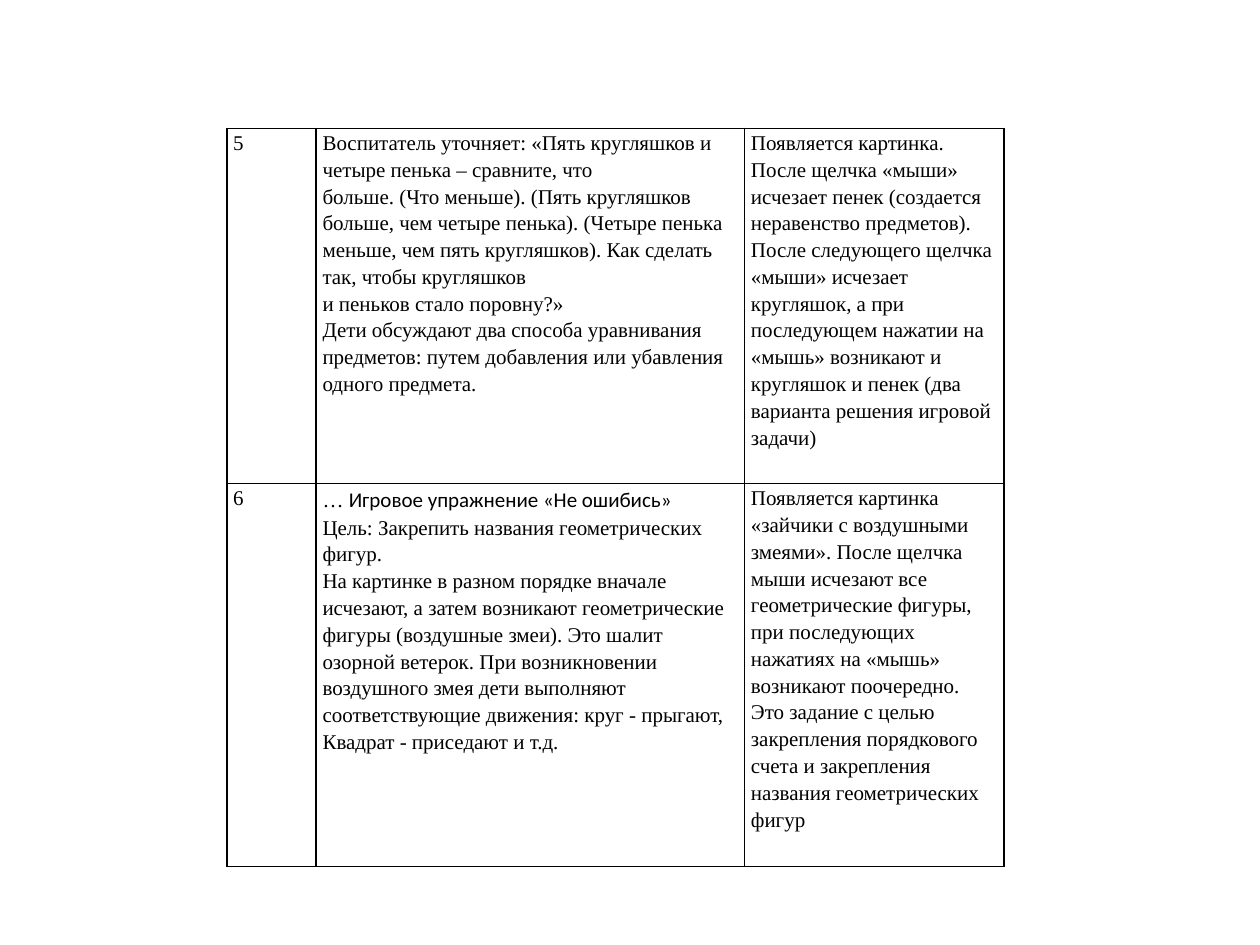
from lxml.etree import SubElement
from pptx import Presentation
from pptx.dml.color import RGBColor
from pptx.oxml.ns import qn
from pptx.util import Pt

BODY_FONT = "Times New Roman"
HEADING_FONT = "Calibri"
BLACK = "000000"
COLUMN_WIDTHS = [51.12, 244.8, 148.32]
ROW_HEIGHTS = [203, 218.9]

# A paragraph is a list of (text, font) spans; a plain string is one body span.
LESSON_ROWS = [
    [
        ["5"],
        [
            "Воспитатель уточняет: «Пять кругляшков и четыре пенька – сравните, что",
            "больше. (Что меньше). (Пять кругляшков больше, чем четыре пенька). "
            "(Четыре пенька меньше, чем пять кругляшков). Как сделать так, чтобы кругляшков",
            "и пеньков стало поровну?»",
            "Дети обсуждают два способа уравнивания предметов: путем добавления "
            "или убавления одного предмета.",
        ],
        [
            "Появляется картинка. После щелчка «мыши»",
            "исчезает пенек (создается неравенство предметов). После следующего "
            "щелчка «мыши» исчезает кругляшок, а при последующем нажатии на «мышь» "
            "возникают и кругляшок и пенек (два варианта решения игровой задачи)",
        ],
    ],
    [
        ["6"],
        [
            [("… ", BODY_FONT), ("Игровое упражнение «Не ошибись»", HEADING_FONT)],
            "Цель: Закрепить названия геометрических фигур.",
            "На картинке в разном порядке вначале исчезают, а затем возникают "
            "геометрические фигуры (воздушные змеи). Это шалит озорной ветерок. "
            "При возникновении воздушного змея дети выполняют соответствующие "
            "движения: круг - прыгают,",
            "Квадрат - приседают и т.д.",
        ],
        [
            "Появляется картинка «зайчики с воздушными змеями». После щелчка мыши "
            "исчезают все геометрические фигуры, при последующих нажатиях на «мышь» "
            "возникают поочередно. Это задание с целью закрепления порядкового счета "
            "и закрепления названия геометрических фигур",
        ],
    ],
]


def color(value):
    return RGBColor.from_string(value)


def set_borders(cell, line_color, width):
    properties = cell._tc.get_or_add_tcPr()
    for position, side in enumerate(("a:lnL", "a:lnR", "a:lnT", "a:lnB")):
        line = SubElement(properties, qn(side), w=str(Pt(width)))
        properties.insert(position, line)
        fill = SubElement(line, qn("a:solidFill"))
        SubElement(fill, qn("a:srgbClr"), val=line_color)


def fill_cell(cell, paragraphs):
    cell.margin_left = cell.margin_right = Pt(3.6)
    cell.margin_top = cell.margin_bottom = Pt(0)
    cell.fill.background()
    set_borders(cell, BLACK, 1)
    frame = cell.text_frame
    for index, content in enumerate(paragraphs):
        para = frame.add_paragraph() if index else frame.paragraphs[0]
        para.line_spacing = 1.15
        spans = [(content, BODY_FONT)] if isinstance(content, str) else content
        for text, font_name in spans:
            span = para.add_run()
            span.text = text
            span.font.name = font_name
            span.font.size = Pt(12)
            span.font.color.rgb = color(BLACK)


def add_lesson_table(page, left, top, widths, heights):
    frame = page.shapes.add_table(
        len(heights), len(widths), Pt(left), Pt(top), Pt(sum(widths)), Pt(sum(heights))
    )
    table = frame.table
    table.first_row = table.horz_banding = False
    for column, width in zip(table.columns, widths):
        column.width = Pt(width)
    for row, height, contents in zip(table.rows, heights, LESSON_ROWS):
        row.height = Pt(height)
        for cell, paragraphs in zip(row.cells, contents):
            fill_cell(cell, paragraphs)


def main():
    deck = Presentation()
    deck.slide_width, deck.slide_height = Pt(720), Pt(540)
    page = deck.slides.add_slide(deck.slide_layouts[6])
    add_lesson_table(page, 129.6, 73.3, COLUMN_WIDTHS, ROW_HEIGHTS)
    deck.save("out.pptx")


if __name__ == "__main__":
    main()
